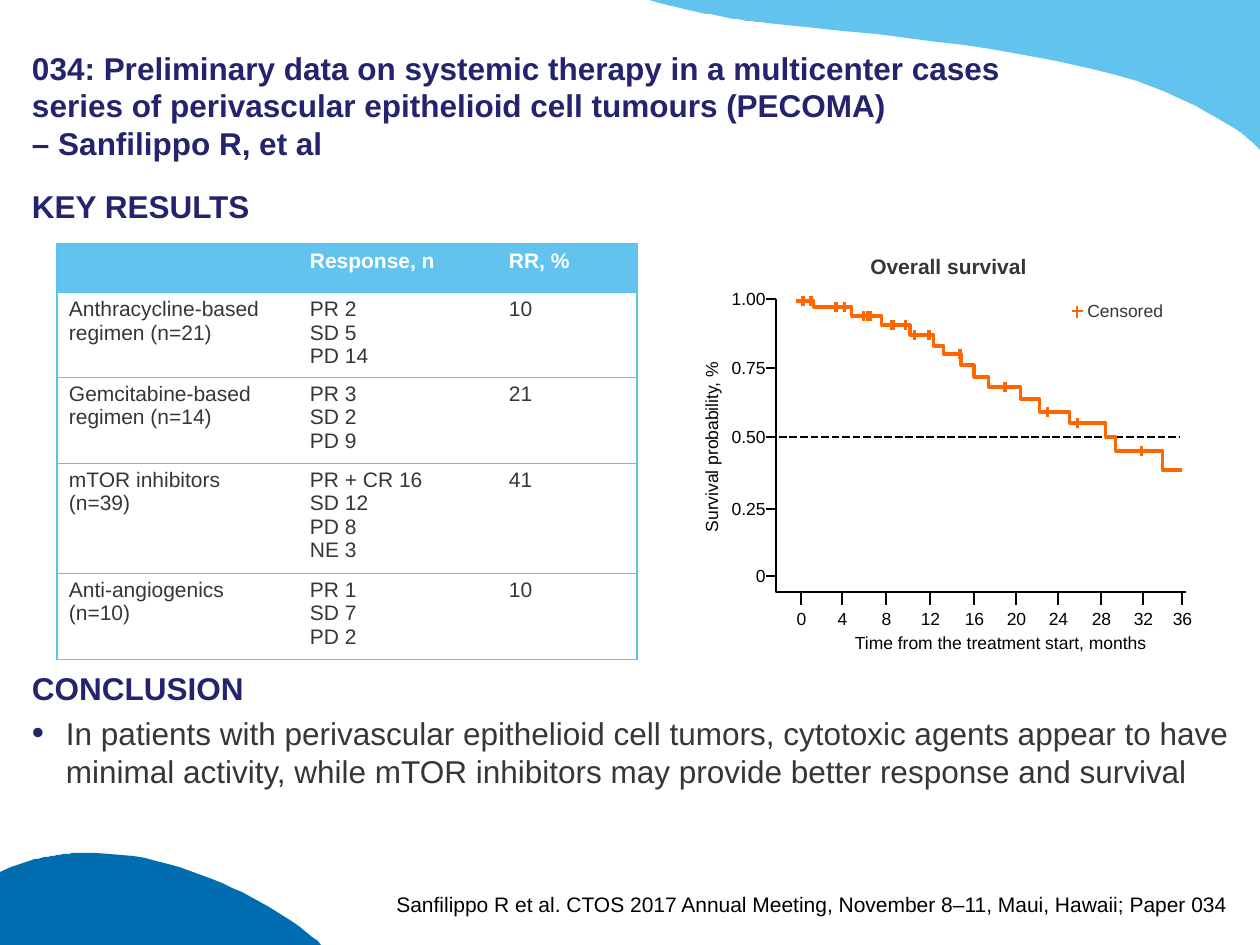
"""Build the PECOMA results slide: response table, survival curve and conclusion."""
from lxml.etree import SubElement
from pptx import Presentation
from pptx.dml.color import RGBColor
from pptx.enum.dml import MSO_LINE
from pptx.enum.text import MSO_ANCHOR as ANCHOR, MSO_AUTO_SIZE as AUTO, PP_ALIGN as ALIGN
from pptx.oxml.ns import qn
from pptx.util import Pt

PX = 7257
NAVY, GREY, BLACK, ORANGE, SKY = "23246D", "363636", "000000", "FF6600", "62C4EE"
rgb = RGBColor.from_string


def write(tf, text, size=10, color=BLACK, bold=False, align=ALIGN.LEFT, before=0, after=0):
    """Append one formatted paragraph per line of text and return the last."""
    for line in text.split("\n"):
        p = tf.paragraphs[-1]
        if p.runs:
            p = tf.add_paragraph()
        p.text = line
        p.alignment = align
        p.space_before, p.space_after = Pt(before), Pt(after)
        for r in p.runs:
            r.font.name, r.font.size, r.font.bold = "Arial", Pt(size), bold
            r.font.color.rgb = rgb(color)
    return p


def rule(x1, y1, x2, y2, color=BLACK, width=1.5):
    """Draw a straight line between two points in px."""
    c = s.shapes.add_connector(1, x1 * PX, y1 * PX, x2 * PX, y2 * PX)
    c.line.color.rgb, c.line.width = rgb(color), Pt(width)
    SubElement(c._element.spPr, qn("a:effectLst"))
    return c


prs = Presentation()
prs.slide_width, prs.slide_height = 1260 * PX, 945 * PX
s = prs.slides.add_slide(prs.slide_layouts[1])

waves = [
    (SKY, [(649, 0), (1260, 0), (1260, 150), (1251, 141), (1246, 137, 1242, 133, 1237, 130),
           (1155, 78, 1089, 54, 766, 23), (727, 19, 692, 11, 659, 3)]),
    ("006DB0", [(84, 853), (183, 851, 275, 906, 318, 941), (321, 945), (0, 945), (0, 872),
                (11, 867), (35, 858, 60, 853, 84, 853)]),
]
for color, segments in waves:
    pts = [segments[0]]
    for seg in segments[1:]:
        if len(seg) == 2:
            pts.append(seg)
            continue
        ctrl = [pts[-1], seg[:2], seg[2:4], seg[4:]]
        for t in [i / 24 for i in range(1, 25)]:
            weights = (1 - t) ** 3, 3 * t * (1 - t) ** 2, 3 * t * t * (1 - t), t ** 3
            pts.append(tuple(sum(w * c[k] for w, c in zip(weights, ctrl)) for k in (0, 1)))
    fb = s.shapes.build_freeform(*pts[0], scale=PX)
    fb.add_line_segments(pts[1:], close=True)
    sp = fb.convert_to_shape()
    sp.shadow.inherit = False
    sp.fill.solid()
    sp.fill.fore_color.rgb = rgb(color)
    sp.line.fill.background()
    s.shapes._spTree.insert(2, sp._element)

title, body = s.shapes.title, s.placeholders[1]
for ph, (x, y, w, h), anchor in [(title, (32, 32, 983, 130), ANCHOR.BOTTOM),
                                 (body, (32, 181, 1197, 732), ANCHOR.TOP)]:
    ph.left, ph.top, ph.width, ph.height = x * PX, y * PX, w * PX, h * PX
    tf = ph.text_frame
    tf.margin_left = tf.margin_right = tf.margin_bottom = 0
    tf.margin_top = 6 * PX
    tf.vertical_anchor, tf.auto_size, tf.word_wrap = anchor, AUTO.NONE, True

write(title.text_frame, "034: Preliminary data on systemic therapy in a multicenter cases series of "
      "perivascular epithelioid cell tumours (PECOMA)\v– Sanfilippo R, et al", 18, NAVY, True)
tf = body.text_frame
for text, before in [("KEY RESULTS", 0), ("CONCLUSION", 250)]:
    pPr = write(tf, text, 18, NAVY, True, before=before, after=4)._p.get_or_add_pPr()
    pPr.set("marL", "0")
    pPr.set("indent", "0")
    SubElement(pPr, qn("a:buNone"))
p = write(tf, "In patients with perivascular epithelioid cell tumors, cytotoxic agents appear to have "
          "minimal activity, while mTOR inhibitors may provide better response and survival",
          18, GREY, after=4)
pPr = p._p.get_or_add_pPr()
pPr.set("marL", str(34 * PX))
pPr.set("indent", str(-34 * PX))
SubElement(SubElement(pPr, qn("a:buClr")), qn("a:srgbClr"), val=NAVY)
SubElement(pPr, qn("a:buSzPct"), val="110000")
SubElement(pPr, qn("a:buFont"), typeface="Arial")
SubElement(pPr, qn("a:buChar"), char="•")

rows = [
    (40, "", "Response, n", "RR, %"),
    (85, "Anthracycline-based regimen (n=21)", "PR 2\nSD 5\nPD 14", "10"),
    (86, "Gemcitabine-based regimen (n=14)", "PR 3\nSD 2\nPD 9", "21"),
    (110, "mTOR inhibitors (n=39)", "PR + CR 16\nSD 12\nPD 8\nNE 3", "41"),
    (86, "Anti-angiogenics (n=10)", "PR 1\nSD 7\nPD 2", "10"),
]
widths = [241, 199, 140]
table = s.shapes.add_table(len(rows), 3, 57 * PX, 244 * PX, sum(widths) * PX, 407 * PX).table
table.horz_banding = False
for col, w in zip(table.columns, widths):
    col.width = w * PX
for i, (height, *texts) in enumerate(rows):
    table.rows[i].height = height * PX
    for j, text in enumerate(texts):
        cell = table.cell(i, j)
        cell.margin_left = cell.margin_right = 12 * PX
        cell.margin_top = cell.margin_bottom = 5 * PX
        write(cell.text_frame, text, 12, GREY if i else "FFFFFF", i == 0)
        tcPr = cell._tc.get_or_add_tcPr()
        for side, shown in [("L", j == 0), ("R", j == 2), ("T", True), ("B", True)]:
            ln = SubElement(tcPr, qn("a:ln" + side), w=str(Pt(0.75)))
            if shown:
                SubElement(SubElement(ln, qn("a:solidFill")), qn("a:srgbClr"), val="5CC1EC")
            else:
                SubElement(ln, qn("a:noFill"))
        if i:
            cell.fill.background()
        else:
            cell.fill.solid()
            cell.fill.fore_color.rgb = rgb(SKY)

x_ticks = [801, 842, 886, 930, 974, 1016, 1058, 1101, 1143, 1182]
y_ticks = [("1.00", 299), ("0.75", 368), ("0.50", 437), ("0.25", 509), ("0", 576)]
centre = dict(align=ALIGN.CENTER)
labels = [
    (857, 247, 183, 38, "Overall survival", dict(centre, size=12, color=GREY, bold=True)),
    (612, 430, 199, 34, "Survival probability, %", centre),
    (835, 626, 331, 34, "Time from the treatment start, months", centre),
    (1075, 294, 102, 34, "Censored", dict(color=GREY)),
]
for i, x in enumerate(x_ticks):
    rule(x, 592, x, 605)
    labels.append((x - 22, 602, 45, 34, str(4 * i), centre))
for text, y in y_ticks:
    rule(766, y, 776, y)
    labels.append((719, y - 17, 59, 34, text, dict(align=ALIGN.RIGHT)))
for x, y, w, h, text, fmt in labels:
    sp = s.shapes.add_textbox(x * PX, y * PX, w * PX, h * PX)
    write(sp.text_frame, text, **fmt)
    if text.startswith("Survival"):
        sp.rotation = 270

rule(779, 437, 1179, 437).line.dash_style = MSO_LINE.SQUARE_DOT
rule(1077, 306, 1077, 318, ORANGE)
rule(1072, 311, 1083, 311, ORANGE)

steps = [(796, 301), (814, 307), (852, 316), (882, 325), (910, 335), (934, 346), (944, 354),
         (961, 365), (974, 377), (989, 387), (1021, 399), (1040, 412), (1070, 423),
         (1106, 437), (1116, 451), (1163, 470)]
curve = [steps[0]]
for x, y in steps[1:]:
    curve += [(x, curve[-1][1]), (x, y)]
curve.append((1182, 470))
axes = [(776, 299), (776, 592), (1186, 592)]
for pts, color, width in [(axes, BLACK, 1.5), (curve, ORANGE, 1.75)]:
    fb = s.shapes.build_freeform(*pts[0], scale=PX)
    fb.add_line_segments(pts[1:], close=False)
    sp = fb.convert_to_shape()
    sp.shadow.inherit = False
    sp.fill.background()
    sp.line.color.rgb, sp.line.width = rgb(color), Pt(width)

censored = [803, 811, 836, 845, 864, 868, 871, 892, 893, 906, 915, 929, 960, 1005, 1048, 1078, 1142]
for x in censored:
    y = [level for start, level in steps if start <= x][-1]
    rule(x, y - 5, x, y + 5, ORANGE, 1.75)

sp = s.shapes.add_textbox(392 * PX, 892 * PX, 836 * PX, 25 * PX)
tf = sp.text_frame
tf.margin_left = tf.margin_right = tf.margin_top = tf.margin_bottom = 0
tf.vertical_anchor = ANCHOR.BOTTOM
write(tf, "Sanfilippo R et al. CTOS 2017 Annual Meeting, November 8–11, Maui, Hawaii; Paper 034",
      12, align=ALIGN.RIGHT)

prs.save("out.pptx")
